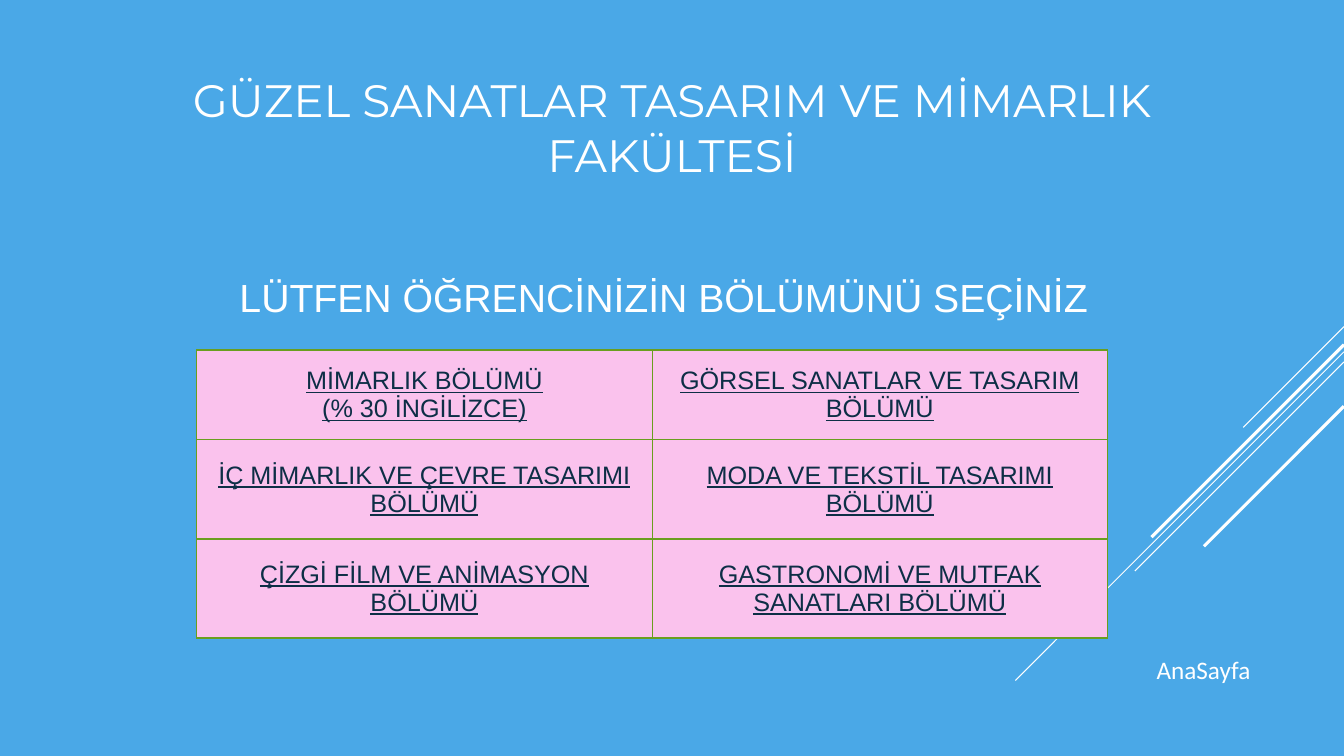
from typing import NamedTuple

from lxml import etree
from pptx import Presentation
from pptx import util as u
from pptx.dml.color import RGBColor
from pptx.enum import shapes, text
from pptx.oxml import ns

Pt = u.Pt

SKY = RGBColor(0x4A, 0xA8, 0xE7)
WHITE = RGBColor(0xFF, 0xFF, 0xFF)
PINK = RGBColor(0xFA, 0xC2, 0xED)
NAVY = RGBColor(0x0D, 0x2E, 0x46)
GREEN = RGBColor(0x6A, 0x9E, 0x1F)

SLIDE_WIDTH, SLIDE_HEIGHT = 960, 540


class Ray(NamedTuple):
    """A 45-degree line falling leftwards from the right slide edge."""
    top: float
    run: float
    weight: float


class Label(NamedTuple):
    wording: str
    left: float
    top: float
    width: float
    height: float
    font: str
    size: float


RAYS = [
    Ray(233.3, 72, 0.75),
    Ray(251.3, 234.7, 0.75),
    Ray(258.5, 149.4, 0.75),
    Ray(246.2, 137.5, 2.25),
    Ray(290.2, 100, 2.25),
]
FACULTY = Label("GÜZEL SANATLAR TASARIM VE MİMARLIK FAKÜLTESİ",
                90, 49, 780, 83.5, "Montserrat", 32.4)
LABELS = [
    Label("LÜTFEN ÖĞRENCİNİZİN BÖLÜMÜNÜ SEÇİNİZ", 131, 191.5, 686, 41, "Arial", 28),
    Label("AnaSayfa", 814.3, 463.7, 90.7, 29, "Calibri", 18),
]
DEPARTMENTS = [
    ("MİMARLIK BÖLÜMÜ\n(% 30 İNGİLİZCE)", "GÖRSEL SANATLAR VE TASARIM BÖLÜMÜ"),
    ("İÇ MİMARLIK VE ÇEVRE TASARIMI BÖLÜMÜ", "MODA VE TEKSTİL TASARIMI BÖLÜMÜ"),
    ("ÇİZGİ FİLM VE ANİMASYON BÖLÜMÜ", "GASTRONOMİ VE MUTFAK SANATLARI BÖLÜMÜ"),
]
COLUMN_WIDTH = 325.3
ROW_HEIGHTS = [64.2, 70.8, 70.8]


def write(frame, wording: str, font: str, size: float, color: RGBColor,
          underline: bool = False) -> None:
    """Fill a text frame with centred, formatted text."""
    frame.text = wording
    frame.word_wrap = True
    for paragraph in frame.paragraphs:
        paragraph.alignment = text.PP_ALIGN.CENTER
        for run in paragraph.runs:
            run.font.name = font
            run.font.size = Pt(size)
            run.font.color.rgb = color
            if underline:
                run.font.underline = True


def draw_ray(slide, ray: Ray) -> None:
    line = slide.shapes.add_connector(
        shapes.MSO_CONNECTOR.STRAIGHT, Pt(SLIDE_WIDTH), Pt(ray.top),
        Pt(SLIDE_WIDTH - ray.run), Pt(ray.top + ray.run))
    line.line.color.rgb = WHITE
    line.line.width = Pt(ray.weight)
    etree.SubElement(line._element.spPr, ns.qn("a:effectLst"))


def draw_title(slide, label: Label) -> None:
    title = slide.shapes.title
    title.left, title.top = Pt(label.left), Pt(label.top)
    title.width, title.height = Pt(label.width), Pt(label.height)
    write(title.text_frame, label.wording, label.font, label.size, WHITE)
    title.text_frame.vertical_anchor = text.MSO_ANCHOR.MIDDLE
    title.text_frame.auto_size = text.MSO_AUTO_SIZE.NONE


def draw_label(slide, label: Label) -> None:
    box = slide.shapes.add_textbox(
        Pt(label.left), Pt(label.top), Pt(label.width), Pt(label.height))
    write(box.text_frame, label.wording, label.font, label.size, WHITE)
    box.text_frame.auto_size = text.MSO_AUTO_SIZE.SHAPE_TO_FIT_TEXT


def add_borders(cell) -> None:
    properties = cell._tc.get_or_add_tcPr()
    for side in ("lnL", "lnR", "lnT", "lnB"):
        border = etree.SubElement(properties, ns.qn(f"a:{side}"), w=str(Pt(1)))
        fill = etree.SubElement(border, ns.qn("a:solidFill"))
        etree.SubElement(fill, ns.qn("a:srgbClr"), val=str(GREEN))


def draw_departments(slide) -> None:
    columns = len(DEPARTMENTS[0])
    table = slide.shapes.add_table(
        len(DEPARTMENTS), columns, Pt(140.5), Pt(250),
        Pt(COLUMN_WIDTH * columns), Pt(sum(ROW_HEIGHTS))).table
    table.first_row = table.horz_banding = False
    for column in table.columns:
        column.width = Pt(COLUMN_WIDTH)
    for row, height, names in zip(table.rows, ROW_HEIGHTS, DEPARTMENTS):
        row.height = Pt(height)
        for cell, name in zip(row.cells, names):
            add_borders(cell)
            cell.fill.solid()
            cell.fill.fore_color.rgb = PINK
            cell.vertical_anchor = text.MSO_ANCHOR.MIDDLE
            write(cell.text_frame, name, "Arial", 18, NAVY, underline=True)


def main() -> None:
    presentation = Presentation()
    presentation.slide_width = Pt(SLIDE_WIDTH)
    presentation.slide_height = Pt(SLIDE_HEIGHT)
    slide = presentation.slides.add_slide(
        presentation.slide_layouts.get_by_name("Title Only"))
    slide.background.fill.solid()
    slide.background.fill.fore_color.rgb = SKY
    for ray in RAYS:
        draw_ray(slide, ray)
    draw_title(slide, FACULTY)
    draw_departments(slide)
    for label in LABELS:
        draw_label(slide, label)
    presentation.save("out.pptx")


if __name__ == "__main__":
    main()
